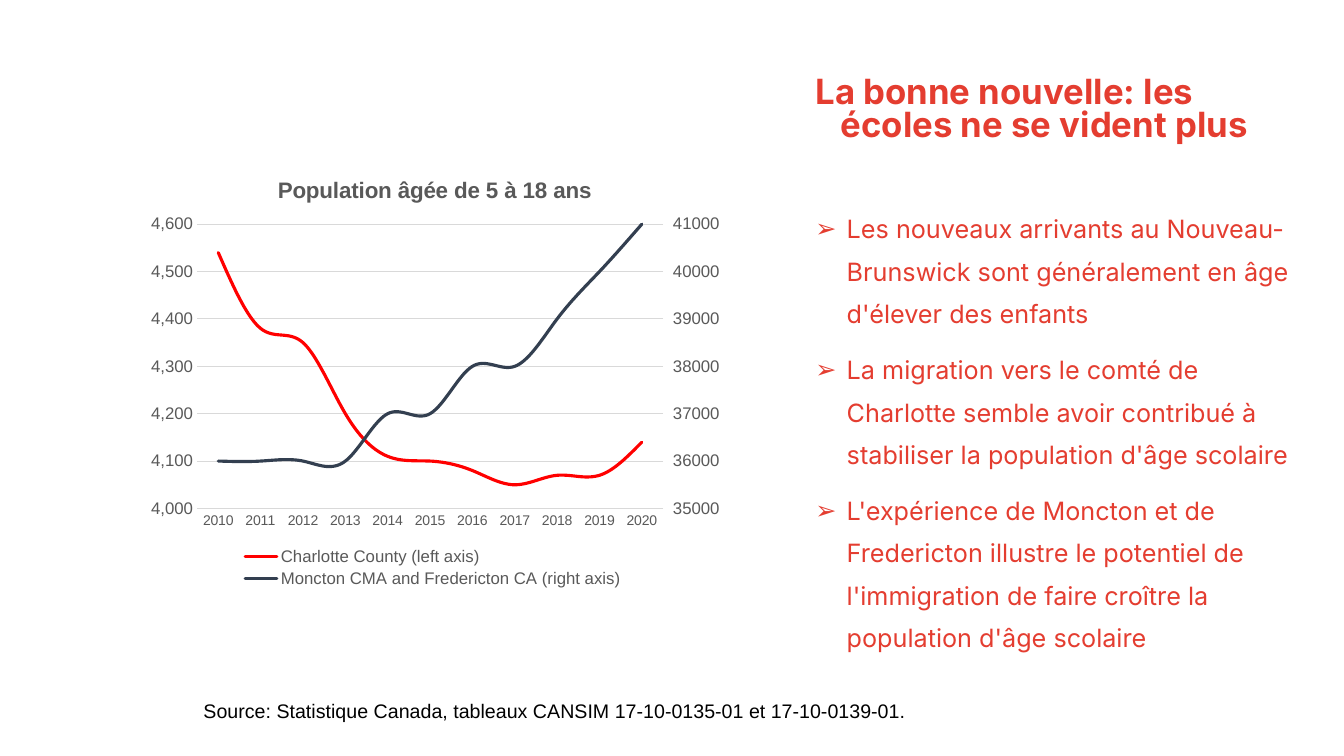
"""Build a slide on school-age population: a two-axis line chart beside key messages."""
from copy import deepcopy
from dataclasses import dataclass

from lxml import etree
from pptx import Presentation
from pptx import util as u
from pptx.chart import axis as ax
from pptx.chart import data as cd
from pptx.dml.color import RGBColor
from pptx.enum import chart as ec
from pptx.oxml import ns


@dataclass(frozen=True)
class Theme:
    """Colours, fonts and type sizes of the slide."""
    accent: str = "E43D30"
    ink: str = "000000"
    label: str = "595959"
    grid: str = "D9D9D9"
    charlotte: str = "FF0000"
    cities: str = "333F50"
    display: str = "Inter"
    plain: str = "Arial"
    heading_size: float = 24.8
    message_size: float = 18
    chart_title_size: float = 16
    source_size: float = 14
    axis_size: float = 12
    year_size: float = 10


@dataclass(frozen=True)
class Passage:
    """A text block with its place and paragraph style."""
    box: tuple[float, float, float, float]
    lines: tuple[str, ...]
    size: float
    face: str
    color: str
    bold: bool = False
    spacing: float = 1.0
    gap: float = 0
    margin: float = 0
    hanging: float = 0
    bullet: str = ""


@dataclass(frozen=True)
class Region:
    """A population curve."""
    name: str
    people: tuple[int, ...]
    color: str


THEME = Theme()
CHART_BOX = (1.37, 1.53, 5.85, 4.34)
YEARS = [str(year) for year in range(2010, 2021)]
REGIONS = (
    Region("Charlotte County (left axis)",
           (4540, 4380, 4350, 4200, 4110, 4100, 4080, 4050, 4070, 4070, 4140),
           THEME.charlotte),
    Region("Moncton CMA and Fredericton CA (right axis)",
           (36000, 36000, 36000, 36000, 37000, 37000, 38000, 38000, 39000, 40000, 41000),
           THEME.cities),
)
PASSAGES = (
    Passage((7.74, 0.72, 5.09, 1.09), ("La bonne nouvelle: les écoles ne se vident plus",),
            THEME.heading_size, THEME.display, THEME.accent, bold=True, spacing=0.8,
            margin=0.5, hanging=0.25),
    Passage((7.74, 1.95, 5.27, 4.78), (
        "Les nouveaux arrivants au Nouveau-Brunswick sont généralement en âge "
        "d'élever des enfants",
        "La migration vers le comté de Charlotte semble avoir contribué à stabiliser "
        "la population d'âge scolaire",
        "L'expérience de Moncton et de Fredericton illustre le potentiel de "
        "l'immigration de faire croître la population d'âge scolaire"),
        THEME.message_size, THEME.display, THEME.accent, spacing=1.4, gap=10,
        margin=0.56, hanging=0.31, bullet="➢"),
    Passage((1.92, 6.88, 9.36, 0.34),
            ("Source: Statistique Canada, tableaux CANSIM 17-10-0135-01 et 17-10-0139-01.",),
            THEME.source_size, THEME.plain, THEME.ink),
)


def inches(box: tuple[float, ...]) -> list[u.Length]:
    """Turn plain numbers into lengths."""
    return [u.Inches(side) for side in box]


def style(font, size: float, color: str, face: str = THEME.plain, bold: bool = False) -> None:
    """Set the look of a font."""
    font.size, font.name, font.bold = u.Pt(size), face, bold
    font.color.rgb = RGBColor.from_string(color)


def stroke(line, color: str, width: float) -> None:
    """Set the colour and width of a line."""
    line.color.rgb = RGBColor.from_string(color)
    line.width = u.Pt(width)


def write(slide, passage: Passage) -> None:
    """Add a text block to the slide."""
    frame = slide.shapes.add_textbox(*inches(passage.box)).text_frame
    frame.word_wrap = True
    frame.text = "\n".join(passage.lines)
    for order, paragraph in enumerate(frame.paragraphs):
        props = paragraph._p.get_or_add_pPr()
        if passage.margin:
            props.set("marL", str(u.Inches(passage.margin)))
            props.set("indent", str(-u.Inches(passage.hanging)))
        if passage.bullet:
            tint = etree.SubElement(props, ns.qn("a:buClr"))
            etree.SubElement(tint, ns.qn("a:srgbClr"), val=passage.color)
            etree.SubElement(props, ns.qn("a:buFont"), typeface=THEME.plain)
            etree.SubElement(props, ns.qn("a:buChar"), char=passage.bullet)
        paragraph.line_spacing = passage.spacing
        if order:
            paragraph.space_before = u.Pt(passage.gap)
        for run in paragraph.runs:
            style(run.font, passage.size, passage.color, passage.face, passage.bold)


def place(part, index: int, inner: bool = False, **sides: float) -> None:
    """Fix a chart part at fractions of the chart area."""
    for old in part.findall(ns.qn("c:layout")):
        part.remove(old)
    layout = etree.Element(ns.qn("c:layout"))
    part.insert(index, layout)
    manual = etree.SubElement(layout, ns.qn("c:manualLayout"))
    if inner:
        etree.SubElement(manual, ns.qn("c:layoutTarget"), val="inner")
    for mode in ("xMode", "yMode"):
        etree.SubElement(manual, ns.qn(f"c:{mode}"), val="edge")
    for side, share in sides.items():
        etree.SubElement(manual, ns.qn(f"c:{side}"), val=str(share))


def scale(axis, low: float, high: float, step: float, pattern: str) -> None:
    """Set the range and number format of a value axis."""
    axis.minimum_scale, axis.maximum_scale, axis.major_unit = low, high, step
    axis.tick_labels.number_format = pattern
    axis.tick_labels.number_format_is_linked = False


def add_right_axis(chart) -> None:
    """Move the last curve to a value axis on the right."""
    area = chart._chartSpace.chart.plotArea
    left_plot = area.find(ns.qn("c:lineChart"))
    right_plot = deepcopy(left_plot)
    left_curves, right_curves = (p.findall(ns.qn("c:ser")) for p in (left_plot, right_plot))
    left_plot.remove(left_curves[1])
    right_plot.remove(right_curves[0])
    left_plot.addnext(right_plot)
    years, people = (deepcopy(a._element) for a in (chart.category_axis, chart.value_axis))
    for own, other, axis_id in ((years, people, "5001"), (people, years, "5002")):
        own.find(ns.qn("c:axId")).set("val", axis_id)
        other.find(ns.qn("c:crossAx")).set("val", axis_id)
    for link, axis_id in zip(right_plot.findall(ns.qn("c:axId")), ("5001", "5002")):
        link.set("val", axis_id)
    chart.value_axis._element.addnext(people)
    people.addnext(years)
    people.find(ns.qn("c:axPos")).set("val", "r")
    people.find(ns.qn("c:crosses")).set("val", "max")
    right = ax.ValueAxis(people)
    right.has_major_gridlines = False
    right.major_tick_mark = ec.XL_TICK_MARK.OUTSIDE
    scale(right, 35000, 41000, 1000, "General")
    ax.CategoryAxis(years).visible = False


def draw_population(slide) -> None:
    """Add the population chart."""
    table = cd.CategoryChartData()
    table.categories = YEARS
    for region in REGIONS:
        table.add_series(region.name, region.people)
    chart = slide.shapes.add_chart(ec.XL_CHART_TYPE.LINE, *inches(CHART_BOX), table).chart
    style(chart.font, THEME.year_size, THEME.ink)
    chart.has_title = True
    heading = chart.chart_title.text_frame
    heading.text = "Population âgée de 5 à 18 ans"
    style(heading.paragraphs[0].runs[0].font, THEME.chart_title_size, THEME.label, bold=True)
    chart.has_legend = True
    chart.legend.position = ec.XL_LEGEND_POSITION.BOTTOM
    chart.legend.include_in_layout = False
    style(chart.legend.font, THEME.axis_size, THEME.label)
    for region, curve in zip(REGIONS, chart.plots[0].series):
        curve.smooth = True
        curve.marker.style = ec.XL_MARKER_STYLE.NONE
        stroke(curve.format.line, region.color, 2.25)
        curve._element.find(f"{ns.qn('c:spPr')}/{ns.qn('a:ln')}").set("cap", "rnd")
    years, people = chart.category_axis, chart.value_axis
    for axis, size in ((years, THEME.year_size), (people, THEME.axis_size)):
        axis.major_tick_mark = axis.minor_tick_mark = ec.XL_TICK_MARK.NONE
        style(axis.tick_labels.font, size, THEME.label)
    stroke(years.format.line, THEME.grid, 0.75)
    people.format.line.fill.background()
    stroke(people.major_gridlines.format.line, THEME.grid, 0.75)
    scale(people, 4000, 4600, 100, "#,##0")
    add_right_axis(chart)
    place(chart._chartSpace.chart.plotArea, 0, inner=True, x=0.1, y=0.16, w=0.79, h=0.65)
    place(chart.chart_title._element, 1, x=0.23, y=0.04)
    place(chart.legend._element, 1, x=0.16, y=0.89, w=0.68, h=0.11)


def main() -> None:
    """Build and save the slide."""
    deck = Presentation()
    deck.slide_width, deck.slide_height = inches((13.33, 7.5))
    slide = deck.slides.add_slide(deck.slide_layouts[6])
    for passage in PASSAGES:
        write(slide, passage)
    draw_population(slide)
    deck.save("out.pptx")


if __name__ == "__main__":
    main()
